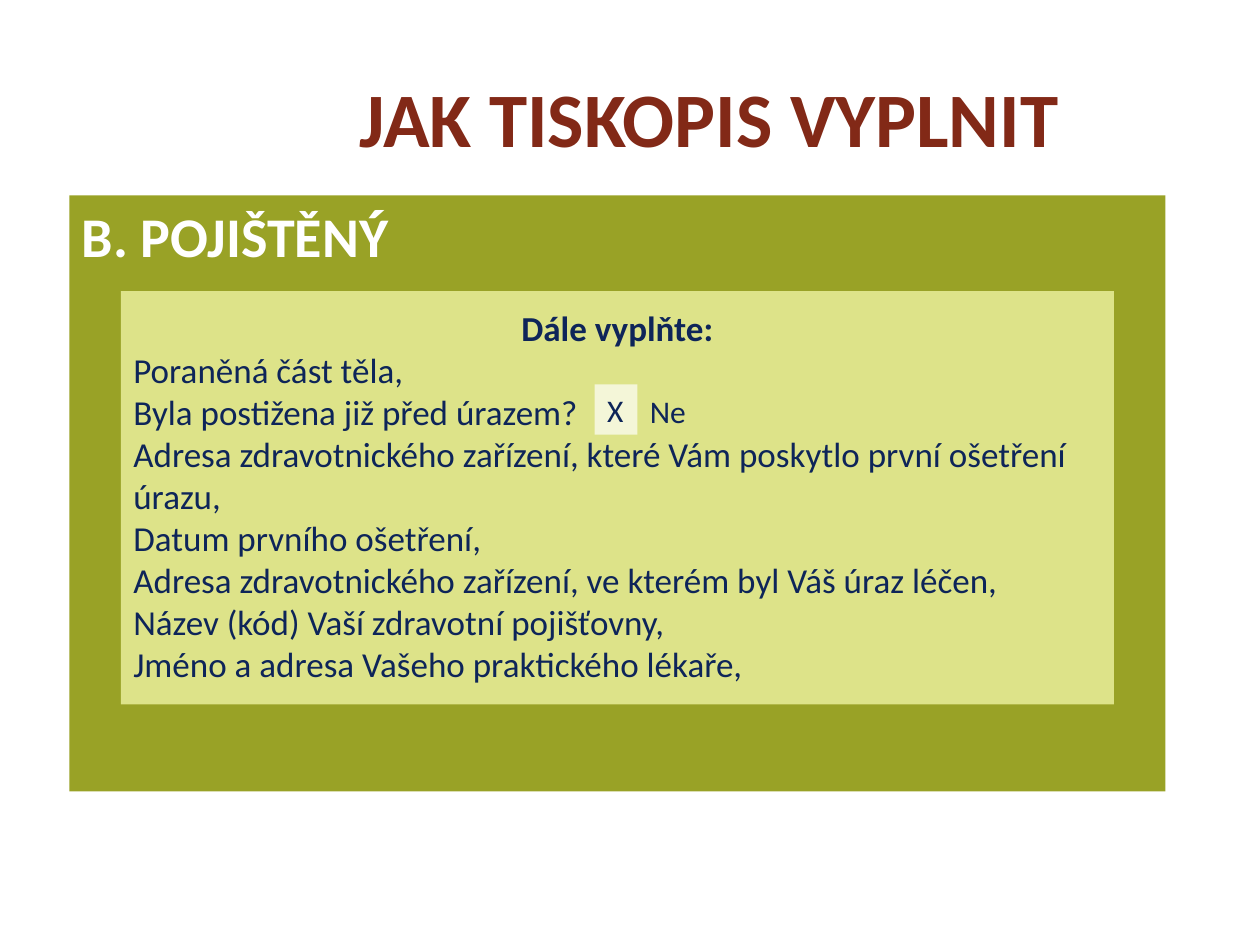
from dataclasses import dataclass

from pptx import Presentation
from pptx.dml.color import RGBColor as Color
from pptx.enum.shapes import MSO_SHAPE as Shape
from pptx.enum.text import MSO_ANCHOR as Anchor, PP_ALIGN as Align
from pptx.util import Inches, Pt


@dataclass(frozen=True)
class Theme:
    font: str = "Calibri"
    title: str = "822917"
    panel: str = "99A226"
    form: str = "DDE389"
    mark: str = "F4F6D8"
    ink: str = "0E2559"
    white: str = "FFFFFF"
    title_size: int = 44
    heading_size: int = 32
    body_size: int = 20
    answer_size: int = 18


THEME = Theme()
WIDTH, HEIGHT = Inches(10), Inches(7.5)
FORM_LINES = [
    "Dále vyplňte:",
    "Poraněná část těla,",
    "Byla postižena již před úrazem?",
    "Adresa zdravotnického zařízení, které Vám poskytlo první ošetření úrazu,",
    "Datum prvního ošetření,",
    "Adresa zdravotnického zařízení, ve kterém byl Váš úraz léčen,",
    "Název (kód) Vaší zdravotní pojišťovny,",
    "Jméno a adresa Vašeho praktického lékaře,",
]


def share(left, top, width, height):
    return [round(part * size / 100) for part, size in
            zip((left, top, width, height), (WIDTH, HEIGHT) * 2)]


def inner(area, left, top, width, height):
    x, y, w, h = area
    return [round(x + w * left), round(y + h * top), round(w * width), round(h * height)]


def add_block(page, area, fill):
    box = page.shapes.add_shape(Shape.RECTANGLE, *area)
    box.shadow.inherit = False
    box.fill.solid()
    box.fill.fore_color.rgb = Color.from_string(fill)
    box.line.fill.background()
    return box


def write(box, lines, size, color, bold=False, align=Align.LEFT, anchor=Anchor.TOP, wrap=True):
    frame = box.text_frame
    frame.text = "\n".join(lines)
    frame.word_wrap = wrap
    frame.vertical_anchor = anchor
    for para in frame.paragraphs:
        para.alignment = align
        for span in para.runs:
            span.font.name = THEME.font
            span.font.size = Pt(size)
            span.font.bold = bold
            span.font.color.rgb = Color.from_string(color)
    return frame


def add_title(page, area):
    box = page.shapes.add_textbox(*area)
    write(box, ["JAK TISKOPIS VYPLNIT"], THEME.title_size, THEME.title,
          bold=True, align=Align.CENTER, anchor=Anchor.MIDDLE)


def add_panel(page, area):
    box = add_block(page, area, THEME.panel)
    write(box, ["B. POJIŠTĚNÝ"], THEME.heading_size, THEME.white, bold=True)


def add_form(page, area):
    box = add_block(page, area, THEME.form)
    frame = write(box, FORM_LINES, THEME.body_size, THEME.ink)
    frame.margin_top = Inches(0.12)
    lead = frame.paragraphs[0]
    lead.alignment = Align.CENTER
    lead.runs[0].font.bold = True


def add_answer(page, area):
    mark = add_block(page, inner(area, 0, 0, 0.41, 1), THEME.mark)
    write(mark, ["X"], THEME.answer_size, THEME.ink)
    label = page.shapes.add_textbox(*inner(area, 0.41, 0.02, 0.59, 1))
    write(label, ["Ne"], THEME.answer_size, THEME.ink, wrap=False)


def main():
    deck = Presentation()
    deck.slide_width, deck.slide_height = WIDTH, HEIGHT
    page = deck.slides.add_slide(deck.slide_layouts[6])
    add_title(page, share(17.6, 4, 77.4, 16.67))
    add_panel(page, share(5.5, 20.67, 87, 63.07))
    add_form(page, share(9.6, 30.8, 78.8, 43.73))
    add_answer(page, share(47.2, 40.67, 8.3, 5.33))
    deck.save("out.pptx")


if __name__ == "__main__":
    main()
